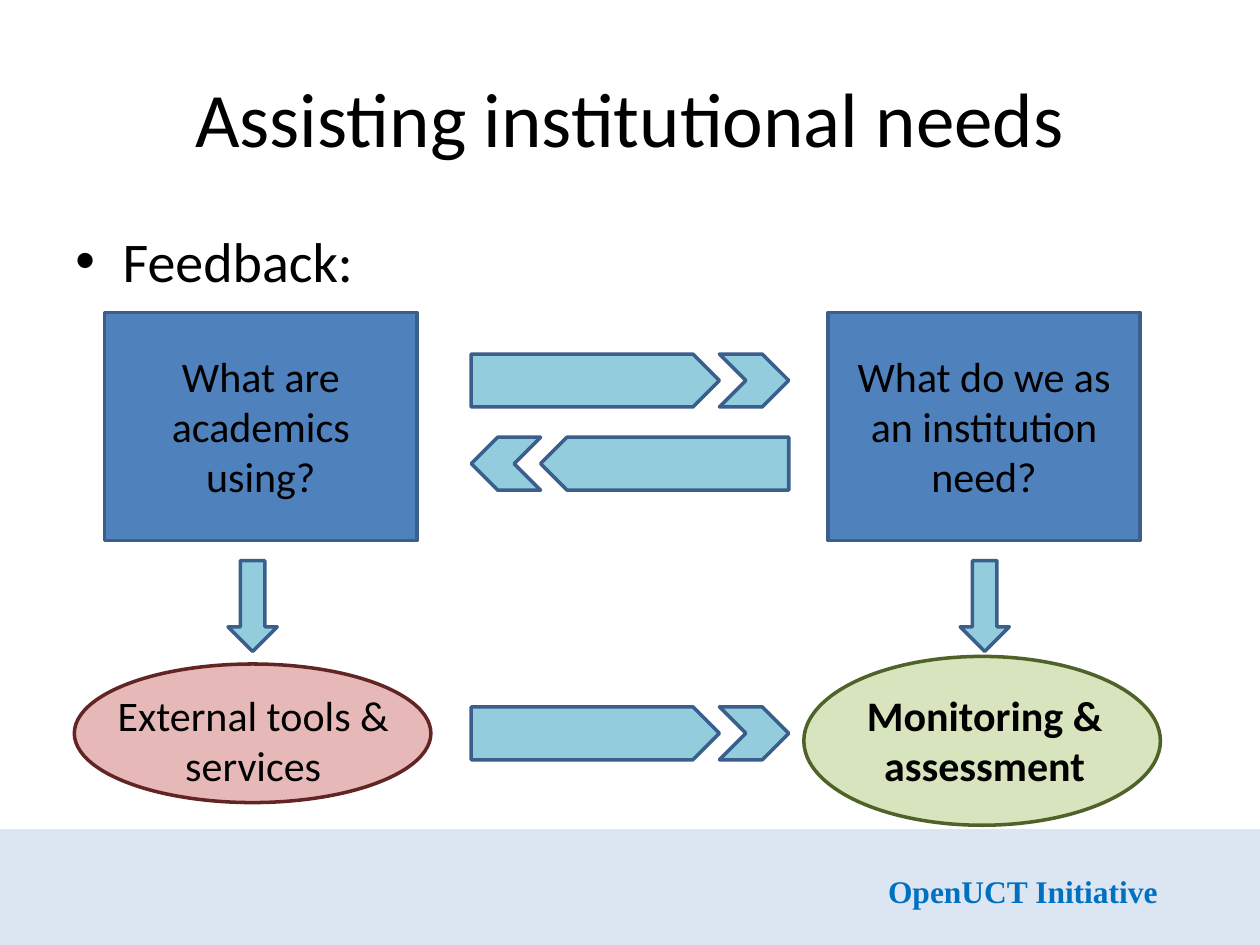
"""Build the slide on feedback between academics and their institution."""
from lxml import etree
from pptx import Presentation
from pptx.dml.color import RGBColor
from pptx.enum import shapes, text
from pptx.oxml import ns
from pptx.util import Inches, Pt

BLACK = RGBColor(0x00, 0x00, 0x00)
BLUE = RGBColor(0x4F, 0x81, 0xBD)
NAVY = RGBColor(0x3A, 0x5F, 0x8C)
AQUA = RGBColor(0x93, 0xCD, 0xDD)
PINK = RGBColor(0xE6, 0xB9, 0xB8)
MAROON = RGBColor(0x63, 0x25, 0x23)
LIME = RGBColor(0xD7, 0xE4, 0xBD)
OLIVE = RGBColor(0x4F, 0x62, 0x28)
PALE = RGBColor(0xDC, 0xE6, 0xF2)
SKY = RGBColor(0x00, 0x70, 0xC0)
KIND = shapes.MSO_SHAPE


class Sketch:
    """Draw styled elements on a grid of 100 columns by 75 rows."""

    cell = Inches(0.1)
    face = "Calibri"
    size = 24
    stroke = 2

    def __init__(self, deck):
        """Add a blank page to the deck."""
        self.page = deck.slides.add_slide(deck.slide_layouts[6])

    def place(self, *lengths):
        """Turn columns and rows into slide lengths."""
        return [round(length * self.cell) for length in lengths]

    def shape(self, kind, area, fill, line=None, turn=0):
        """Add a filled preset shape, outlined if a line colour is given."""
        box = self.page.shapes.add_shape(kind, *self.place(*area))
        box.shadow.inherit = False
        box.rotation = turn
        box.fill.solid()
        box.fill.fore_color.rgb = fill
        if line is None:
            box.line.fill.background()
        else:
            box.line.color.rgb = line
            box.line.width = Pt(self.stroke)

    def label(self, words, area, size=None, face=None, color=BLACK, bold=False,
              align=text.PP_ALIGN.CENTER, anchor=text.MSO_ANCHOR.TOP, wrap=True, bullet=None):
        """Add a text box holding one paragraph."""
        frame = self.page.shapes.add_textbox(*self.place(*area)).text_frame
        frame.word_wrap = wrap
        frame.vertical_anchor = anchor
        para = frame.paragraphs[0]
        para.alignment = align
        if bullet:
            self.bullet(para, bullet)
        span = para.add_run()
        span.text = words
        span.font.size = Pt(size or self.size)
        span.font.name = face or self.face
        span.font.bold = bold
        span.font.color.rgb = color

    def bullet(self, para, mark, indent=3.75):
        """Give a paragraph a bullet with a hanging indent."""
        props = para._p.get_or_add_pPr()
        (hang,) = self.place(indent)
        props.set("marL", str(hang))
        props.set("indent", str(-hang))
        etree.SubElement(props, ns.qn("a:buFont")).set("typeface", "Arial")
        etree.SubElement(props, ns.qn("a:buChar")).set("char", mark)

    def flow(self, top, back=False, left=37.4, body=19.7, tip=5.5, height=4.2):
        """Add a long arrow and its chevron, pointing right or back left."""
        turn = 180 if back else 0
        body_left, tip_left = (left + tip, left) if back else (left, left + body)
        self.shape(KIND.PENTAGON, (body_left, top, body, height), AQUA, NAVY, turn)
        self.shape(KIND.CHEVRON, (tip_left, top, tip, height), AQUA, NAVY, turn)

    def drop(self, left):
        """Add a downward arrow between a question and its outcome."""
        self.shape(KIND.DOWN_ARROW, (left, 44.5, 3.9, 7.2), AQUA, NAVY)

    def question(self, words, left, inset=0):
        """Add a blue square with a question in it."""
        width = 24.8
        self.shape(KIND.RECTANGLE, (left, 24.8, width, 18.1), BLUE, NAVY)
        self.label(words, (left + inset, 27.3, width - 2 * inset, 13.1))

    def outcome(self, words, oval, area, fill, line, bold=False):
        """Add an oval with an outcome in it."""
        self.shape(KIND.OVAL, oval, fill, line)
        self.label(words, area, bold=bold)


def main():
    """Compose the slide and save the deck."""
    deck = Presentation()
    deck.slide_width, deck.slide_height = Inches(10), Inches(7.5)
    sketch = Sketch(deck)

    sketch.shape(KIND.RECTANGLE, (0, 65.8, 100, 9.2), PALE)
    sketch.label("OpenUCT Initiative", (69.5, 68.7, 23.6, 4), size=18, face="Times New Roman",
                 color=SKY, bold=True, align=text.PP_ALIGN.LEFT, wrap=False)
    sketch.label("Assisting institutional needs", (5, 3, 90, 12.5), size=44,
                 anchor=text.MSO_ANCHOR.MIDDLE)
    sketch.label("Feedback:", (5, 17.5, 90, 49.5), size=32,
                 align=text.PP_ALIGN.LEFT, bullet="•")

    sketch.question("What are academics using?", 8.3, inset=2.2)
    sketch.question("What do we as an institution need?", 65.7)
    sketch.flow(28.1)
    sketch.flow(34.7, back=True)

    sketch.outcome("External tools & services", (5.9, 52.7, 28.3, 11),
                   (7.9, 54.2, 24.4, 9.1), PINK, MAROON)
    sketch.outcome("Monitoring & assessment", (63.8, 52.1, 28.3, 13.4),
                   (64, 54.2, 28.3, 9.1), LIME, OLIVE, bold=True)
    for left in (18.1, 76.2):
        sketch.drop(left)
    sketch.flow(56.1)

    deck.save("out.pptx")


if __name__ == "__main__":
    main()
